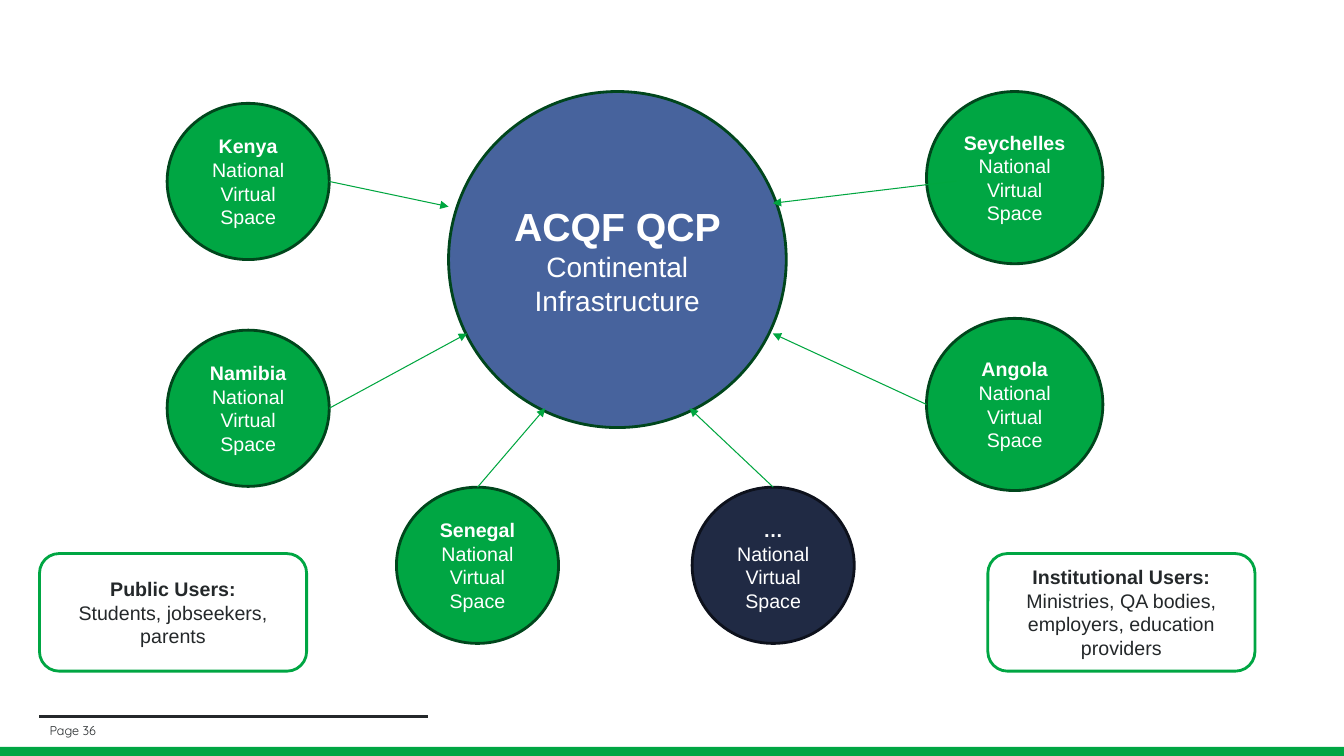
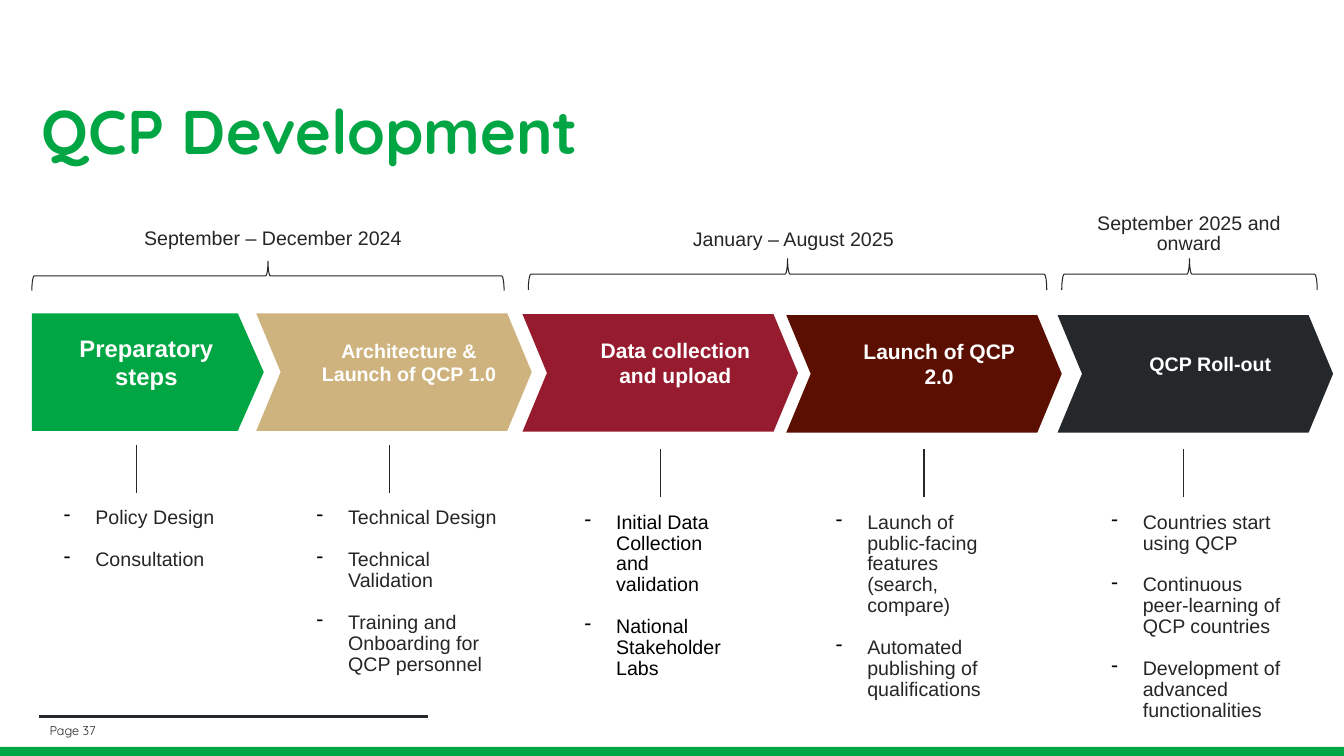
from lxml import etree
from pptx import Presentation
from pptx import util as u
from pptx.dml.color import RGBColor
from pptx.enum import shapes, text
from pptx.oxml import ns

COLUMNS, ROWS = 160, 90
WIDTH, HEIGHT = u.Inches(13.33), u.Inches(7.5)
GREEN, ARROW_GREEN, DARK_GREEN = "00A643", "00A640", "00461C"
INK, BODY, WHITE, BLACK = "24282A", "282625", "FFFFFF", "000000"
BLUE, NAVY, NAVY_EDGE = "47639D", "202A44", "0D111C"
TAN, CRIMSON, MAROON = "CEB37E", "971B2F", "5B0F00"
BODY_FONT, BRAND_FONT = "Arial", "Quicksand"
INSETS = (1.2, 0.6, 1.2, 0.6)
LABEL_INSETS = (6.4, 0.6, 6.4, 1.6)
LEADING = 0.89
SHAPE, ALIGN = shapes.MSO_SHAPE, text.PP_ALIGN
MIDDLE, TOP = text.MSO_ANCHOR.MIDDLE, text.MSO_ANCHOR.TOP


def col(count):
    return round(WIDTH * count / COLUMNS)


def row(count):
    return round(HEIGHT * count / ROWS)


def place(box):
    left, top, width, height = box
    return col(left), row(top), col(width), row(height)


def rgb(colour):
    return RGBColor.from_string(colour)


def add_xml(parent, tag, **attributes):
    return etree.SubElement(parent, ns.qn(tag), attributes)


def write(shape, paragraphs, size, colour, font=BODY_FONT, align=ALIGN.CENTER,
          anchor=MIDDLE, insets=INSETS, leading=None, gap=0, bullet=False):
    """Fill a shape with paragraphs, each a list of (text, bold, optional size)."""
    frame = shape.text_frame
    frame.word_wrap = True
    frame.vertical_anchor = anchor
    left, top, right, bottom = insets
    frame.margin_left, frame.margin_right = col(left), col(right)
    frame.margin_top, frame.margin_bottom = row(top), row(bottom)
    for index, spans in enumerate(paragraphs):
        para = frame.add_paragraph() if index else frame.paragraphs[0]
        para.alignment = align
        if leading:
            para.line_spacing = leading
        if index and gap:
            para.space_before = u.Pt(gap)
        if bullet:
            add_dash(para)
        for words, bold, *own_size in spans:
            span = para.add_run()
            span.text = words
            span.font.name = font
            span.font.size = u.Pt(own_size[0] if own_size else size)
            span.font.bold = bold
            span.font.color.rgb = rgb(colour)


def add_dash(para):
    properties = para._p.get_or_add_pPr()
    indent = col(3.75)
    properties.set("marL", str(indent))
    properties.set("indent", str(-indent))
    add_xml(add_xml(properties, "a:buClr"), "a:srgbClr", val=BLACK)
    add_xml(properties, "a:buChar", char="-")


def add_figure(page, kind, box, fill=None, edge=None, weight=2, adjust=None):
    figure = page.shapes.add_shape(kind, *place(box))
    figure.shadow.inherit = False
    if fill:
        figure.fill.solid()
        figure.fill.fore_color.rgb = rgb(fill)
    else:
        figure.fill.background()
    if edge:
        figure.line.color.rgb = rgb(edge)
        figure.line.width = u.Pt(weight)
    else:
        figure.line.fill.background()
    if adjust is not None:
        figure.adjustments[0] = adjust
    return figure


def add_label(page, box, paragraphs, size, colour, **style):
    write(page.shapes.add_textbox(*place(box)), paragraphs, size, colour, **style)


def add_line(page, start, end, colour, weight=0.75, arrow=False):
    line = page.shapes.add_connector(
        shapes.MSO_CONNECTOR.STRAIGHT,
        col(start[0]), row(start[1]), col(end[0]), row(end[1]))
    line.line.color.rgb = rgb(colour)
    line.line.width = u.Pt(weight)
    if arrow:
        add_xml(line.line._get_or_add_ln(), "a:tailEnd", type="triangle")
    add_xml(line._element.spPr, "a:effectLst")


def add_brace(page, left, top, width, height):
    """Draw a brace that opens downwards over the given area."""
    shift = (width - height) / 2
    brace = add_figure(page, SHAPE.LEFT_BRACE,
                       (left + shift, top - shift, height, width),
                       edge=INK, weight=0.75, adjust=0.083)
    brace.rotation = 90


def add_page(deck, number):
    page = deck.slides.add_slide(deck.slide_layouts[6])
    add_figure(page, SHAPE.RECTANGLE, (-0.4, 88.9, 160.8, 1.6), GREEN)
    add_line(page, (4.7, 85.3), (50.9, 85.3), INK, 1.5)
    add_label(page, (4.7, 85.8, 48.7, 2.3), [[(f"Page {number}", False)]], 9, INK,
              font=BRAND_FONT, align=ALIGN.LEFT)
    return page


def add_space(page, country, box, anchor, tip, fill=GREEN, edge=DARK_GREEN):
    """Draw a national circle and an arrow from a share of its box to the hub."""
    node = add_figure(page, SHAPE.FLOWCHART_CONNECTOR, box, fill, edge)
    write(node, [[(country, True), (" National Virtual Space", False)]], 14, WHITE)
    left, top, width, height = box
    start = (left + width * anchor[0], top + height * anchor[1])
    add_line(page, start, tip, ARROW_GREEN, arrow=True)


def add_users(page, left, heading, members):
    card = add_figure(page, SHAPE.ROUNDED_RECTANGLE, (left, 65.9, 31.8, 14),
                      WHITE, GREEN, adjust=0.167)
    write(card, [[(heading, True)], [(members, False)]], 14, INK)


def build_network(deck):
    page = add_page(deck, 36)
    hub = add_figure(page, SHAPE.OVAL, (53.4, 10.9, 40.2, 40), BLUE, DARK_GREEN)
    write(hub, [[("ACQF QCP", True, 28)], [("Continental Infrastructure", False)]],
          20, WHITE)

    small, large, step = (19.3, 18.6), (21, 20.5), 27
    left, right, lower = 19.9, 110.3, 58
    add_space(page, "Kenya", (left, 12.3, *small), (1, 0.5), (53.4, 24.6))
    add_space(page, "Namibia", (left, 12.3 + step, *small), (1, 0.5), (55.6, 39.7))
    add_space(page, "Seychelles", (right, 10.9, *large), (0.17, 0.52), (92, 24.2))
    add_space(page, "Angola", (right, 10.9 + step, *large), (0, 0.5), (92, 39.7))
    add_space(page, "Senegal", (47.2, lower, *small), (0.5, 0), (64.9, 48.6))
    add_space(page, "…", (82.4, lower, *small), (0.5, 0), (82.1, 48.6),
              NAVY, NAVY_EDGE)

    add_users(page, 4.7, "Public Users:", "Students, jobseekers, parents")
    add_users(page, 117.6, "Institutional Users:",
              "Ministries, QA bodies, employers, education providers")


def add_stage(page, left, top, fill, name, size, first=False):
    if first:
        kind, width, adjust, inset = SHAPE.PENTAGON, 27.6, 0.221, 2.4
    else:
        kind, width, adjust, inset = SHAPE.CHEVRON, 32.8, 0.208, 4.8
    stage = add_figure(page, kind, (left, top, width, 14), fill, adjust=adjust)
    write(stage, [[(name, True)]], size, WHITE, insets=(inset, 0, 1.2, 2.4))


def add_tasks(page, tick, top, left, width, tasks, colour=BODY):
    """Draw a tick and, below it, the dashed list of a stage."""
    add_line(page, (tick, top), (tick, top + 5.7), INK)
    add_label(page, (left, top + 6.9, width, 20), [[(task, False)] for task in tasks],
              14, colour, align=ALIGN.LEFT, anchor=TOP, insets=(0, 0.6, 0, 1.6),
              leading=LEADING, gap=15, bullet=True)


def add_period(page, brace, label, dates):
    add_brace(page, *brace)
    add_label(page, label, [[(dates, False)]], 14, BODY, anchor=TOP,
              insets=LABEL_INSETS, leading=LEADING)


def build_timeline(deck):
    page = add_page(deck, 37)
    add_label(page, (3.8, 8.5, 150.5, 15.1), [[("QCP Development", True)]], 44, GREEN,
              font=BRAND_FONT, align=ALIGN.LEFT, leading=0.9)

    add_period(page, (3.8, 31.1, 56.2, 3.5), (5, 26.6, 55, 4.6),
               "September – December 2024")
    add_period(page, (62.9, 30.8, 61.7, 3.7), (63.6, 26.8, 61.7, 4.6),
               "January – August 2025")
    add_period(page, (126.4, 30.8, 30.4, 3.7), (123.2, 24.8, 36.7, 3.7),
               "September 2025 and onward")

    add_stage(page, 3.8, 37.3, GREEN, "Preparatory steps", 17, first=True)
    add_stage(page, 30.5, 37.3, TAN, "Architecture & Launch of QCP 1.0", 14)
    add_stage(page, 62.2, 37.4, CRIMSON, "Data collection and upload", 15)
    add_stage(page, 93.6, 37.5, MAROON, "Launch of QCP 2.0", 15)
    add_stage(page, 125.9, 37.5, INK, "QCP Roll-out", 14)

    upper, lower = 53, 53.5
    add_tasks(page, 16.3, upper, 7.6, 20, ["Policy Design", "Consultation"])
    add_tasks(page, 46.4, upper, 37.7, 21.5,
              ["Technical Design", "Technical Validation",
               "Training and Onboarding for QCP personnel"])
    add_tasks(page, 78.6, lower, 69.6, 17.6,
              ["Initial Data Collection and validation",
               "National Stakeholder Labs"], BLACK)
    add_tasks(page, 110, lower, 99.5, 20.5,
              ["Launch of public-facing features (search, compare)",
               "Automated publishing of qualifications"])
    add_tasks(page, 140.9, lower, 132.3, 20.5,
              ["Countries start using QCP",
               "Continuous peer-learning of QCP countries",
               "Development of advanced functionalities"])


def main():
    deck = Presentation()
    deck.slide_width, deck.slide_height = WIDTH, HEIGHT
    build_network(deck)
    build_timeline(deck)
    deck.save("out.pptx")


if __name__ == "__main__":
    main()
